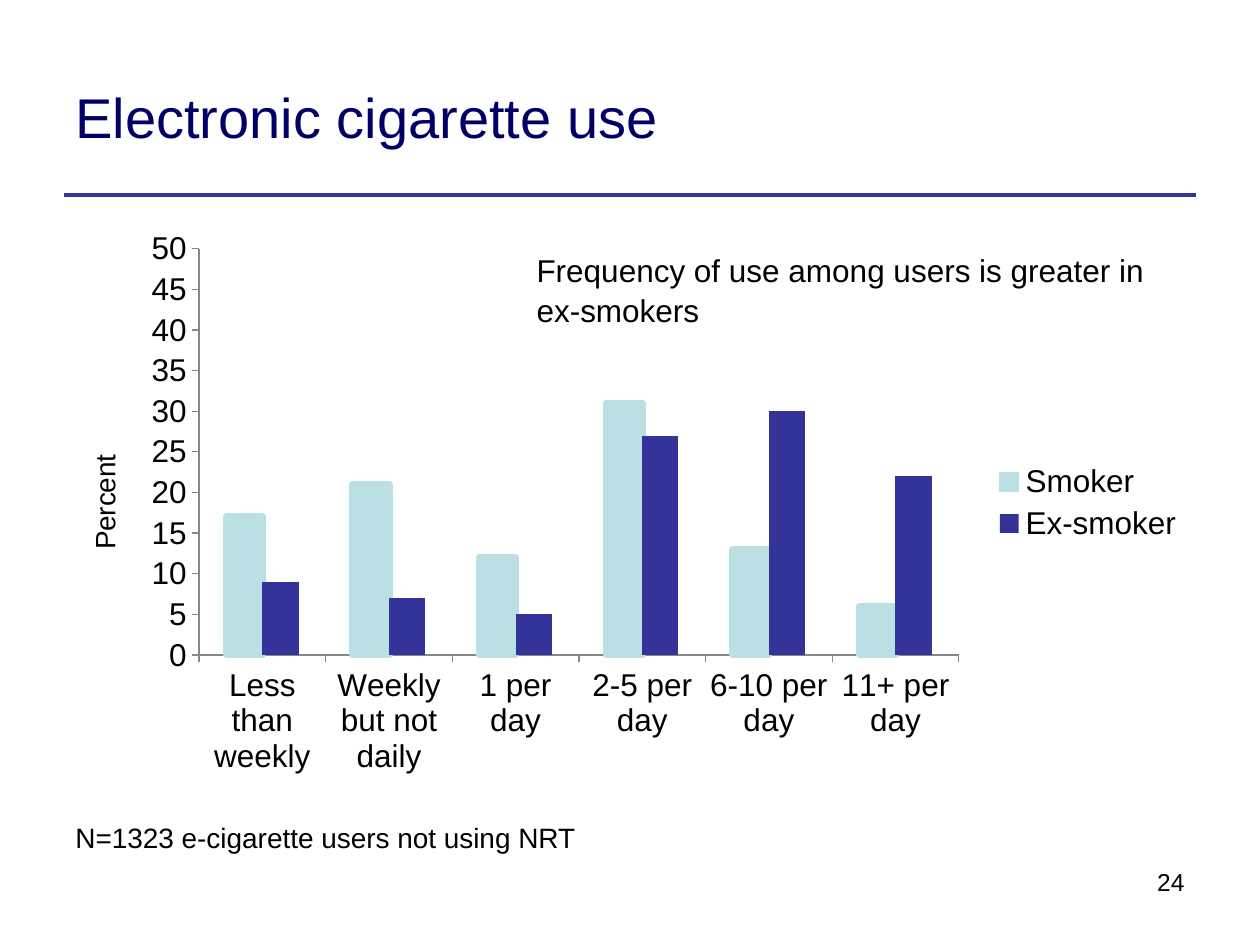
from dataclasses import dataclass

from lxml.etree import SubElement
from pptx import Presentation
from pptx.chart.data import CategoryChartData
from pptx.dml.color import RGBColor
from pptx.enum.chart import XL_CHART_TYPE as ChartType
from pptx.enum.chart import XL_LEGEND_POSITION as LegendPosition
from pptx.enum.chart import XL_TICK_MARK as TickMark
from pptx.enum.shapes import MSO_CONNECTOR as Connector
from pptx.enum.text import MSO_ANCHOR as Anchor
from pptx.enum.text import MSO_AUTO_SIZE as AutoSize
from pptx.enum.text import PP_ALIGN as Align
from pptx.oxml.ns import qn
from pptx.util import Inches, Pt


@dataclass(frozen=True)
class Theme:
    """Colours, font and type sizes of the slide."""
    font: str = "Arial"
    title: str = "000066"
    text: str = "000000"
    axis: str = "878787"
    smoker: str = "BBE0E3"
    accent: str = "333399"
    title_size: int = 32
    body_size: int = 18
    note_size: int = 16
    number_size: int = 14


THEME = Theme()
CATEGORIES = ("Less than weekly", "Weekly but not daily", "1 per day",
              "2-5 per day", "6-10 per day", "11+ per day")
SERIES = (("Smoker", (17, 21, 12, 31, 13, 6), THEME.smoker),
          ("Ex-smoker", (9, 7, 5, 27, 30, 22), THEME.accent))
PLOT_AREA = {"x": 0.12, "y": 0.05, "w": 0.67, "h": 0.72}


def rgb(value):
    """Return a colour object for a hex value."""
    return RGBColor.from_string(value)


def style_font(font, size, color=THEME.text):
    """Apply the theme font with a size and colour."""
    font.name = THEME.font
    font.size = Pt(size)
    font.bold = False
    font.color.rgb = rgb(color)


def write_text(box, text, size=THEME.body_size, color=THEME.text,
               align=Align.LEFT, anchor=Anchor.TOP, wrap=True, spacing=None):
    """Write one formatted paragraph into a shape."""
    frame = box.text_frame
    frame.word_wrap = wrap
    frame.auto_size = AutoSize.NONE if wrap else AutoSize.SHAPE_TO_FIT_TEXT
    frame.vertical_anchor = anchor
    para = frame.paragraphs[0]
    para.alignment = align
    para.line_spacing = spacing
    span = para.add_run()
    span.text = text
    style_font(span.font, size, color)


def add_text(page, text, left, top, width, height, **text_format):
    """Add a text box with formatted text."""
    box = page.shapes.add_textbox(Inches(left), Inches(top),
                                  Inches(width), Inches(height))
    write_text(box, text, **text_format)


def add_title(page, text):
    """Place the title placeholder and write the title."""
    box = page.shapes.title
    box.left, box.top = Inches(0.5), Inches(0.3)
    box.width, box.height = Inches(7.89), Inches(1.25)
    write_text(box, text, size=THEME.title_size, color=THEME.title,
               anchor=Anchor.MIDDLE)


def add_rule(page):
    """Draw the line below the title."""
    rule = page.shapes.add_connector(Connector.STRAIGHT, Inches(0.51),
                                     Inches(1.55), Inches(9.49), Inches(1.55))
    rule.line.color.rgb = rgb(THEME.accent)
    rule.line.width = Pt(2.25)
    SubElement(rule._element.spPr, qn("a:effectLst"))


def style_axis(axis):
    """Give an axis outward ticks, a thin grey line and no gridlines."""
    axis.has_major_gridlines = False
    axis.major_tick_mark = TickMark.OUTSIDE
    axis.minor_tick_mark = TickMark.NONE
    axis.format.line.color.rgb = rgb(THEME.axis)
    axis.format.line.width = Pt(0.75)
    style_font(axis.tick_labels.font, THEME.body_size)


def set_plot_area(chart):
    """Fix the inner plot area as fractions of the chart."""
    area = chart._chartSpace.chart.plotArea
    layout = area.find(qn("c:layout"))
    if layout is None:
        layout = SubElement(area, qn("c:layout"))
        area.insert(0, layout)
    manual = SubElement(layout, qn("c:manualLayout"))
    settings = {"layoutTarget": "inner", "xMode": "edge", "yMode": "edge",
                **PLOT_AREA}
    for name, value in settings.items():
        SubElement(manual, qn(f"c:{name}")).set("val", str(value))


def add_frequency_chart(page):
    """Add the column chart of use by smoking status."""
    data = CategoryChartData()
    data.categories = CATEGORIES
    for name, values, _ in SERIES:
        data.add_series(name, values)
    chart = page.shapes.add_chart(ChartType.COLUMN_CLUSTERED, Inches(0.5),
                                  Inches(1.75), Inches(9), Inches(4.48),
                                  data).chart
    style_font(chart.font, THEME.body_size)
    chart.has_title = False
    chart.has_legend = True
    chart.legend.position = LegendPosition.RIGHT
    chart.legend.include_in_layout = False
    style_font(chart.legend.font, THEME.body_size)

    plot = chart.plots[0]
    plot.gap_width, plot.overlap, plot.vary_by_categories = 150, 0, False
    for series, (_, _, color) in zip(plot.series, SERIES):
        series.format.fill.solid()
        series.format.fill.fore_color.rgb = rgb(color)
    smoker_line = plot.series[0].format.line
    smoker_line.color.rgb = rgb(THEME.smoker)
    smoker_line.width = Pt(4)

    for axis in (chart.category_axis, chart.value_axis):
        style_axis(axis)
    percent = chart.value_axis
    percent.minimum_scale, percent.maximum_scale = 0, 50
    percent.major_unit = 5
    label = percent.axis_title.text_frame.paragraphs[0].add_run()
    label.text = "Percent"
    style_font(label.font, THEME.note_size)
    set_plot_area(chart)


def main():
    """Build the slide and save the deck."""
    deck = Presentation()
    deck.slide_width, deck.slide_height = Inches(10), Inches(7.5)
    page = deck.slides.add_slide(deck.slide_layouts[5])
    add_rule(page)
    add_title(page, "Electronic cigarette use")
    add_text(page, "24", 6.73, 6.83, 2.77, 0.52,
             size=THEME.number_size, align=Align.RIGHT)
    add_frequency_chart(page)
    add_text(page, "N=1323 e-cigarette users not using NRT",
             0.5, 6.46, 4.22, 0.37, size=THEME.note_size, wrap=False)
    add_text(page, "Frequency of use among users is greater in ex-smokers",
             4.16, 1.93, 5.05, 0.92, spacing=1.05)
    deck.save("out.pptx")


if __name__ == "__main__":
    main()
